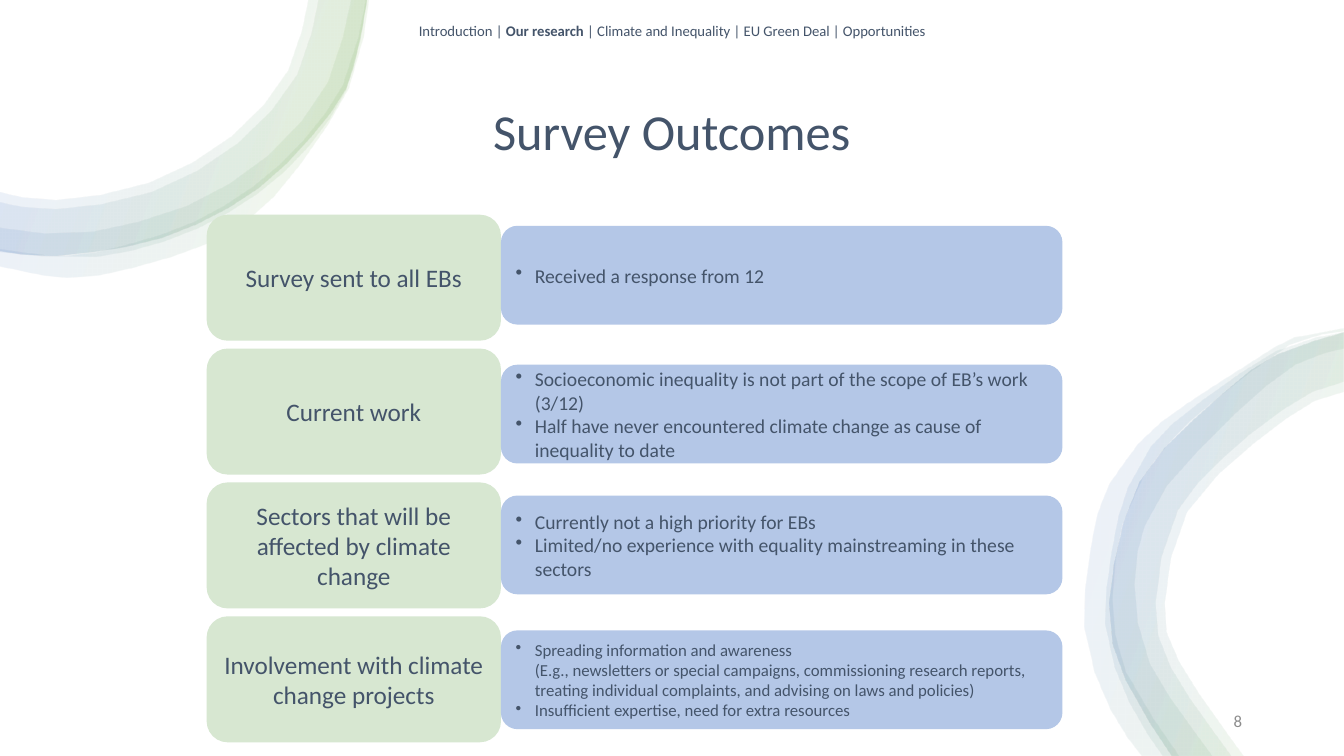
from dataclasses import dataclass
from math import ceil, dist

from lxml import etree
from pptx import Presentation
from pptx.dml.color import RGBColor
from pptx.enum.shapes import MSO_SHAPE
from pptx.enum.text import MSO_ANCHOR, PP_ALIGN
from pptx.oxml import parse_xml
from pptx.oxml.ns import nsdecls, qn
from pptx.util import Inches, Pt

ROUNDED = MSO_SHAPE.ROUNDED_RECTANGLE
LEFT, CENTER, RIGHT = PP_ALIGN.LEFT, PP_ALIGN.CENTER, PP_ALIGN.RIGHT
TOP, MIDDLE, BOTTOM = MSO_ANCHOR.TOP, MSO_ANCHOR.MIDDLE, MSO_ANCHOR.BOTTOM

# The slide is a grid of square cells, ten to the inch
COLUMNS, ROWS = 133.33, 75


def cells(count):
    return Inches(count / 10)


@dataclass(frozen=True)
class Theme:
    font: str = "Calibri"
    ink: str = "44546A"
    number: str = "8C8C8C"
    label: str = "D7E7D1"
    answer: str = "B4C7E7"
    # Ribbon colours by percent along the gradient
    ribbon: tuple = ((2, "FFFFFF"), (16, "70AD47"), (85, "4472C4"), (100, "FFFFFF"))
    ribbon_opacity: int = 10
    ribbon_angle: int = 200
    title_size: float = 36
    label_size: float = 18
    answer_size: float = 14
    small_size: float = 12
    trail_size: float = 10.5


# Ribbon edges in cells: the outer edge, then the inner edge back to the start
LEFT_OUTER = [(36.4, 0), (35.1, 6.6), (32.8, 11.2), (25.7, 18.6), (16.2, 23.5), (5.6, 25.3), (0, 24.8)]
RIGHT_OUTER = [(116.3, 75), (111.7, 67.4), (110.1, 59.8), (113.1, 47.8), (121.3, 39.1),
               (126.7, 35.2), (133.3, 33)]
RIBBONS = [
    (LEFT_OUTER, [(0, 19), (5.6, 19.8), (14.8, 18.1), (23, 13.5), (28.6, 7), (30.6, 0)]),
    (LEFT_OUTER, [(0, 20), (5.6, 20.7), (15.1, 19), (23.6, 14.2), (29.5, 7.4), (31.6, 0)]),
    ([(36.4, 0), (34.3, 9), (28.2, 17), (19.6, 22.6), (9.6, 25.4), (0, 24.9)],
     [(0, 22.5), (4.5, 23.1), (9.3, 22.9), (18.5, 20.4), (26.6, 15.4), (32.5, 8.2), (34.8, 0)]),
    ([(36.6, 0), (34.6, 8.8), (27.2, 19.5), (20.5, 24.2), (9.9, 27.3), (4.3, 27.3), (0, 26.4)],
     [(0, 24.7), (4.5, 25.3), (9.6, 25), (19.3, 22), (27.7, 16.4), (34, 8.5), (36.3, 0)]),
    ([(113.3, 75), (110.2, 70.4), (107.6, 62.2), (108.9, 51), (111.5, 46), (115.2, 41.9),
      (123.9, 36.1), (128.4, 33.5), (133.3, 32.6)],
     [(133.3, 32.9), (128, 34.2), (120.2, 40), (116.5, 43.4), (113.4, 47.4),
      (111.4, 51.9), (110.4, 59.4), (111.7, 66.6), (117, 75)]),
    ([(115.4, 75), (112.1, 69.7), (109.7, 61.9), (111, 51.3), (113.1, 46.3), (116.3, 42.1),
      (126.5, 34.9), (133.3, 33)],
     [(133.3, 34.6), (128.5, 36.2), (122.5, 41.1), (115.8, 48.2),
      (113.6, 52.2), (112.6, 58), (114.1, 65.8), (120.3, 75)]),
    (RIGHT_OUTER, [(133.3, 37.9), (130.2, 38.9), (123.9, 43.2), (116.9, 50.6), (114.7, 59.8),
                   (116.2, 66.2), (122.2, 75)]),
    (RIGHT_OUTER, [(133.3, 38.9), (130.4, 39.8), (124.4, 44), (117.8, 50.8), (115.6, 59.8),
                   (117, 65.6), (123.4, 75)]),
]

# Label, offset of the answer below the label's top, answer size, answers
FINDINGS = [
    ("Survey sent to all EBs", 1.1, Theme.answer_size, ["Received a response from 12"]),
    ("Current work", 1.6, Theme.answer_size,
     ["Socioeconomic inequality is not part of the scope of EB’s work (3/12)",
      "Half have never encountered climate change as cause of inequality to date"]),
    ("Sectors that will be affected by climate change", 1.3, Theme.answer_size,
     ["Currently not a high priority for EBs",
      "Limited/no experience with equality mainstreaming in these sectors"]),
    ("Involvement with climate change projects", 1.4, Theme.small_size,
     ["Spreading information and awareness\n(E.g., newsletters or special campaigns, commissioning "
      "research reports, treating individual complaints, and advising on laws and policies)",
      "Insufficient expertise, need for extra resources"]),
]


def smooth_edge(points, stride=5):
    """Points about one stride apart on a Catmull-Rom curve through the given points."""
    padded = [points[0], *points, points[-1]]
    curve = [points[0]]
    for a, b, c, d in zip(padded, padded[1:], padded[2:], padded[3:]):
        steps = ceil(dist(b, c) / stride)
        for step in range(1, steps + 1):
            t = step / steps
            curve.append(tuple(
                (2 * q + (r - p) * t + (2 * p - 5 * q + 4 * r - s) * t**2
                 + (3 * q - p - 3 * r + s) * t**3) / 2
                for p, q, r, s in zip(a, b, c, d)))
    return curve


def write(para, text, *, font, size, color, bold=False):
    for index, line in enumerate(text.split("\n")):
        if index:
            para.add_line_break()
        span = para.add_run()
        span.text = line
        span.font.name = font
        span.font.size = Pt(size)
        span.font.bold = bold
        span.font.color.rgb = RGBColor.from_string(color)


class SlideBuilder:
    def __init__(self, slide, theme):
        self.shapes = slide.shapes
        self.theme = theme

    def fill_text(self, shape, paragraphs, size, color=None, align=LEFT, anchor=MIDDLE,
                  bullets=False, spacing=None):
        """Each paragraph is a list of (text, bold) spans."""
        frame = shape.text_frame
        frame.word_wrap = True
        frame.vertical_anchor = anchor
        for index, spans in enumerate(paragraphs):
            para = frame.add_paragraph() if index else frame.paragraphs[0]
            para.alignment = align
            para.line_spacing = spacing
            if bullets:
                settings = para._p.get_or_add_pPr()
                settings.set("marL", str(cells(1.9)))
                settings.set("indent", str(-cells(1.9)))
                etree.SubElement(settings, qn("a:buChar")).set("char", "•")
            for text, bold in spans:
                write(para, text, font=self.theme.font, size=size,
                      color=color or self.theme.ink, bold=bold)

    def text(self, place, spans, size, **layout):
        box = self.shapes.add_textbox(*map(cells, place))
        self.fill_text(box, [spans], size, **layout)

    def card(self, place, fill, paragraphs, size, **layout):
        card = self.shapes.add_shape(ROUNDED, *map(cells, place))
        card.shadow.inherit = False
        card.fill.solid()
        card.fill.fore_color.rgb = RGBColor.from_string(fill)
        card.line.fill.background()
        self.fill_text(card, [[(text, False)] for text in paragraphs], size, **layout)
        return card

    def ribbon(self, outer, inner):
        outline = [(cells(x), cells(y)) for x, y in smooth_edge(outer) + smooth_edge(inner)]
        builder = self.shapes.build_freeform(*outline[0])
        builder.add_line_segments(outline[1:])
        ribbon = builder.convert_to_shape()
        ribbon.shadow.inherit = False
        ribbon.line.fill.background()
        stops = "".join(
            f'<a:gs pos="{percent * 1000}"><a:srgbClr val="{color}">'
            f'<a:alpha val="{self.theme.ribbon_opacity * 1000}"/></a:srgbClr></a:gs>'
            for percent, color in self.theme.ribbon)
        gradient = parse_xml(
            f'<a:gradFill {nsdecls("a")}><a:gsLst>{stops}</a:gsLst>'
            f'<a:lin ang="{self.theme.ribbon_angle * 60000}" scaled="0"/></a:gradFill>')
        ribbon._element.spPr.find(qn("a:custGeom")).addnext(gradient)


def main():
    deck = Presentation()
    deck.slide_width, deck.slide_height = cells(COLUMNS), cells(ROWS)
    theme = Theme()
    page = SlideBuilder(deck.slides.add_slide(deck.slide_layouts[6]), theme)

    # Corner ribbons
    for outer, inner in RIBBONS:
        page.ribbon(outer, inner)

    # Title, section trail and page number
    page.text((47.4, 9.1, 38.5, 7.4), [("Survey Outcomes", False)], theme.title_size,
              align=CENTER, anchor=BOTTOM, spacing=0.9)
    page.text((6.8, 1.7, 119.8, 2.9),
              [("Introduction | ", False), ("Our research ", True),
               ("| Climate and Inequality | EU Green Deal | Opportunities", False)],
              theme.trail_size, align=CENTER, anchor=TOP)
    page.text((94.2, 69.5, 30, 4), [("8", False)], theme.small_size,
              color=theme.number, align=RIGHT)

    # Findings: a label and its answers in each row
    for row, (label, offset, size, answers) in enumerate(FINDINGS):
        top = 21.3 + 13.28 * row
        label_card = page.card((20.5, top, 29.2, 12.5), theme.label, [label],
                               theme.label_size, align=CENTER)
        label_card.text_frame.margin_left = label_card.text_frame.margin_right = cells(0.7)
        page.card((49.7, top + offset, 55.7, 9.8), theme.answer, answers, size, bullets=True)

    deck.save("out.pptx")


if __name__ == "__main__":
    main()
